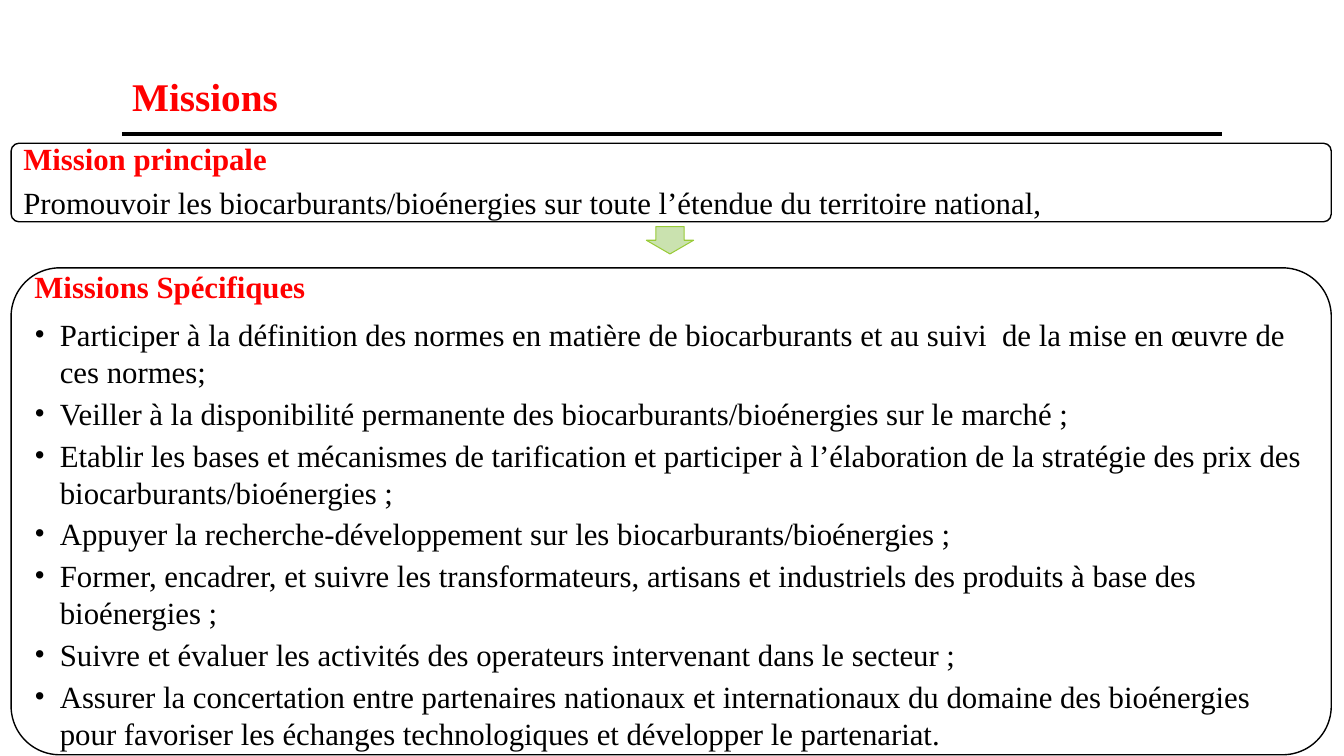
"""Build the slide that lists the main and specific missions."""
from dataclasses import dataclass
from typing import Optional

from lxml.etree import SubElement
from pptx import Presentation
from pptx.dml.color import RGBColor
from pptx.enum.shapes import MSO_CONNECTOR as CONN, MSO_SHAPE as SHAPE
from pptx.enum.text import MSO_ANCHOR as ANCHOR, PP_ALIGN as ALIGN
from pptx.oxml.ns import qn
from pptx.util import Cm, Pt

RED = RGBColor(0xFF, 0x00, 0x00)
BLACK = RGBColor(0x00, 0x00, 0x00)
LIGHT_GREEN = RGBColor(0xCA, 0xE2, 0xAF)
GREEN = RGBColor(0x99, 0xCB, 0x38)
FONT = "Times New Roman"


@dataclass
class Box:
    """Position and size in centimetres."""
    left: float
    top: float
    width: float
    height: float

    def lengths(self) -> tuple:
        """Return the four values as lengths."""
        return Cm(self.left), Cm(self.top), Cm(self.width), Cm(self.height)


@dataclass
class Para:
    """A paragraph with its look."""
    text: str
    size: float = 22
    color: RGBColor = BLACK
    bold: bool = False
    spacing: float = 0.9
    after: float = 7.7
    align: ALIGN = ALIGN.LEFT
    bullet: bool = False


@dataclass
class Panel:
    """A rounded frame and the text inside it."""
    frame: Box
    text: Box
    paras: list


def heading(text: str, align: ALIGN = ALIGN.LEFT) -> Para:
    """Return a red panel heading."""
    return Para(text, color=RED, bold=True, align=align)


def mission(text: str) -> Para:
    """Return a bulleted mission."""
    return Para(text, spacing=1.0, after=3.5, bullet=True)


TITLE = Para("Missions", size=28, color=RED, bold=True, after=0, align=ALIGN.JUSTIFY)
PANELS = [
    Panel(Box(0.28, 3.61, 33.27, 1.98), Box(0.36, 3.66, 33.15, 1.88), [
        heading("Mission principale"),
        Para("Promouvoir les biocarburants/bioénergies sur toute l’étendue du territoire national,"),
    ]),
    Panel(Box(0.28, 6.75, 33.27, 12.27), Box(0.64, 7.11, 32.56, 11.56), [
        heading("Missions Spécifiques", ALIGN.JUSTIFY),
        mission("Participer à la définition des normes en matière de biocarburants et au suivi  de la mise en œuvre de ces normes;"),
        mission("Veiller à la disponibilité permanente des biocarburants/bioénergies sur le marché ;"),
        mission("Etablir les bases et mécanismes de tarification et participer à l’élaboration de la stratégie des prix des biocarburants/bioénergies ;"),
        mission("Appuyer la recherche-développement sur les biocarburants/bioénergies ;"),
        mission("Former, encadrer, et suivre les transformateurs, artisans et industriels des produits à base des bioénergies ;"),
        mission("Suivre et évaluer les activités des operateurs intervenant dans le secteur ;"),
        mission("Assurer la concertation entre partenaires nationaux et internationaux du domaine des bioénergies pour favoriser les échanges technologiques et développer le partenariat."),
    ]),
]


def add_title_rule(s) -> None:
    """Draw the line below the title."""
    line = s.shapes.add_connector(CONN.STRAIGHT, Cm(3.07), Cm(3.38), Cm(30.8), Cm(3.38))
    line.line.color.rgb = BLACK
    line.line.width = Pt(3)
    SubElement(line._element.spPr, qn("a:effectLst"))


def add_shape(s, kind: SHAPE, box: Box, adjustments: list, color: RGBColor,
              weight: float, fill: Optional[RGBColor] = None) -> None:
    """Draw an outlined preset shape, filled if a fill is given."""
    sp = s.shapes.add_shape(kind, *box.lengths())
    sp.shadow.inherit = False
    for i, value in enumerate(adjustments):
        sp.adjustments[i] = value
    if fill is None:
        sp.fill.background()
    else:
        sp.fill.solid()
        sp.fill.fore_color.rgb = fill
    sp.line.color.rgb = color
    sp.line.width = Pt(weight)


def add_text(s, box: Box, paras: list, anchor: ANCHOR, inset: float) -> None:
    """Write paragraphs in a text box."""
    tf = s.shapes.add_textbox(*box.lengths()).text_frame
    tf.word_wrap = True
    tf.vertical_anchor = anchor
    tf.margin_left = tf.margin_right = tf.margin_top = tf.margin_bottom = Cm(inset)
    for i, para in enumerate(paras):
        p = tf.add_paragraph() if i else tf.paragraphs[0]
        p.alignment = para.align
        p.line_spacing = para.spacing
        p.space_after = Pt(para.after)
        if para.bullet:
            pPr = p._p.get_or_add_pPr()
            pPr.set("marL", str(Cm(0.64)))
            pPr.set("indent", str(-Cm(0.64)))
            SubElement(pPr, qn("a:buFont"), typeface=FONT)
            SubElement(pPr, qn("a:buChar"), char="•")
        r = p.add_run()
        r.text = para.text
        r.font.name = FONT
        r.font.size = Pt(para.size)
        r.font.bold = para.bold
        r.font.color.rgb = para.color


def main() -> None:
    """Build and save the slide."""
    prs = Presentation()
    prs.slide_width, prs.slide_height = Cm(33.87), Cm(19.05)
    s = prs.slides.add_slide(prs.slide_layouts[6])
    add_title_rule(s)
    add_text(s, Box(3.2, 0.1, 27.6, 3.05), [TITLE], ANCHOR.BOTTOM, 0.13)
    for panel in PANELS:
        add_shape(s, SHAPE.ROUNDED_RECTANGLE, panel.frame, [0.1], BLACK, 1)
        add_text(s, panel.text, panel.paras, ANCHOR.MIDDLE, 0.23)
    add_shape(s, SHAPE.DOWN_ARROW, Box(16.29, 5.71, 1.19, 0.69), [0.6, 0.5],
              GREEN, 0.75, LIGHT_GREEN)
    prs.save("out.pptx")


if __name__ == "__main__":
    main()
